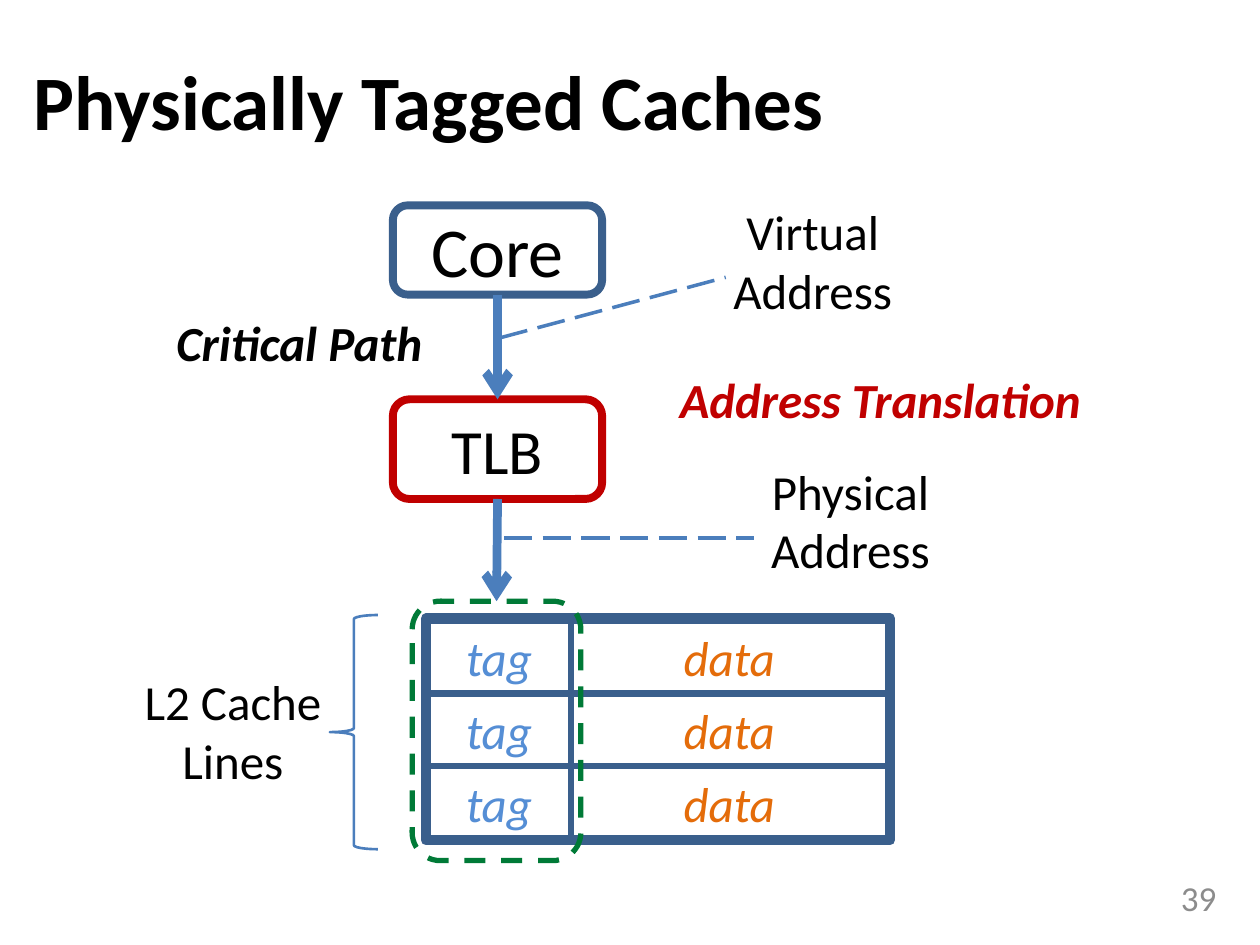
from lxml.etree import SubElement
from pptx import Presentation
from pptx.dml.color import RGBColor
from pptx.enum.dml import MSO_LINE
from pptx.enum.shapes import MSO_CONNECTOR, MSO_SHAPE
from pptx.enum.text import MSO_ANCHOR, PP_ALIGN
from pptx.oxml.ns import qn
from pptx.util import Cm, Pt

BLACK, NAVY, BLUE, RED = "000000", "3A5F8C", "4B7EBC", "C00000"
GREEN, ORANGE, SKY, GREY = "007A37", "E46C0A", "558ED5", "8C8C8C"
TOP, BOTTOM = 0, 2


def color(value):
    return RGBColor.from_string(value)


def write(box, text, size=28, ink=BLACK, bold=False, italic=False,
          align=PP_ALIGN.CENTER, anchor=MSO_ANCHOR.MIDDLE):
    """Fill a shape with text, one paragraph per line."""
    frame = box.text_frame
    frame.word_wrap = True
    frame.vertical_anchor = anchor
    for index, line in enumerate(text.split("\n")):
        para = frame.add_paragraph() if index else frame.paragraphs[0]
        para.alignment = align
        span = para.add_run()
        span.text = line
        font = span.font
        font.name, font.size = "Calibri", Pt(size)
        font.bold, font.italic = bold, italic
        font.color.rgb = color(ink)


def add_label(page, text, left, top, width, height, **style):
    box = page.shapes.add_textbox(Cm(left), Cm(top), Cm(width), Cm(height))
    write(box, text, **style)


def add_outline(page, kind, left, top, width, height, line, weight, dash=None):
    """Add an unfilled shape."""
    shape = page.shapes.add_shape(kind, Cm(left), Cm(top), Cm(width), Cm(height))
    shape.shadow.inherit = False
    shape.fill.background()
    shape.line.color.rgb = color(line)
    shape.line.width = Pt(weight)
    shape.line.dash_style = dash
    return shape


def add_line(page, x1, y1, x2, y2, weight, dash=None):
    line = page.shapes.add_connector(
        MSO_CONNECTOR.STRAIGHT, Cm(x1), Cm(y1), Cm(x2), Cm(y2))
    line.line.color.rgb = color(BLUE)
    line.line.width = Pt(weight)
    line.line.dash_style = dash
    SubElement(line._element.spPr, qn("a:effectLst"))
    return line


def add_arrow(page, upper, lower):
    """Join the bottom of one shape to the top of another."""
    arrow = add_line(page, 0, 0, 1, 1, 5)
    arrow.begin_connect(upper, BOTTOM)
    arrow.end_connect(lower, TOP)
    SubElement(arrow.line._get_or_add_ln(), qn("a:tailEnd"), type="arrow")


def add_cache(page):
    """Draw the cache lines and return the frame around their tags."""
    add_outline(page, MSO_SHAPE.RECTANGLE, 8.59, 12.47, 9.35, 4.47, NAVY, 6)
    columns = [("tag", 8.6, 2.92, SKY), ("data", 11.51, 6.38, ORANGE)]
    for row in range(3):
        for text, left, width, ink in columns:
            cell = add_outline(page, MSO_SHAPE.RECTANGLE, left, 12.52 + 1.47 * row,
                               width, 1.45, NAVY, 3)
            write(cell, text, ink=ink, italic=True)
    return add_outline(page, MSO_SHAPE.ROUNDED_RECTANGLE, 8.31, 12.12, 3.4, 5.23,
                       GREEN, 3, MSO_LINE.DASH)


def main():
    deck = Presentation()
    deck.slide_width, deck.slide_height = Cm(25.4), Cm(19.05)
    page = deck.slides.add_slide(deck.slide_layouts[6])

    add_label(page, "Physically Tagged Caches", 0.43, 0.43, 22.86, 3.18,
              size=44, bold=True, align=PP_ALIGN.LEFT)
    add_label(page, "39", 18.85, 17.58, 5.92, 1.02,
              size=20, ink=GREY, align=PP_ALIGN.RIGHT)

    core = add_outline(page, MSO_SHAPE.ROUNDED_RECTANGLE, 7.92, 4.14, 4.22, 1.8, NAVY, 4.5)
    write(core, "Core", size=40)
    tlb = add_outline(page, MSO_SHAPE.ROUNDED_RECTANGLE, 7.92, 8.05, 4.22, 2.01, RED, 4.5)
    write(tlb, "TLB", size=36)
    tags = add_cache(page)
    add_arrow(page, core, tlb)
    add_arrow(page, tlb, tags)

    add_line(page, 10.08, 6.81, 14.63, 5.59, 2, MSO_LINE.LONG_DASH)
    add_line(page, 10.16, 10.85, 15.19, 10.85, 2, MSO_LINE.LONG_DASH)
    for text, left, top in [("Virtual\nAddress", 13.87, 3.94),
                            ("Physical Address", 14.63, 9.17),
                            ("L2 Cache\nLines", 2.18, 13.41)]:
        add_label(page, text, left, top, 5.03, 2.64, anchor=MSO_ANCHOR.TOP)
    for text, left, top, width, ink in [
            ("Critical Path", 1.27, 6.17, 9.53, BLACK),
            ("Address Translation", 12.12, 7.32, 11.25, RED)]:
        add_label(page, text, left, top, width, 1.45, ink=ink,
                  bold=True, italic=True, anchor=MSO_ANCHOR.TOP)
    add_outline(page, MSO_SHAPE.LEFT_BRACE, 6.65, 12.4, 0.97, 4.72, BLUE, 1.5)

    deck.save("out.pptx")


if __name__ == "__main__":
    main()
